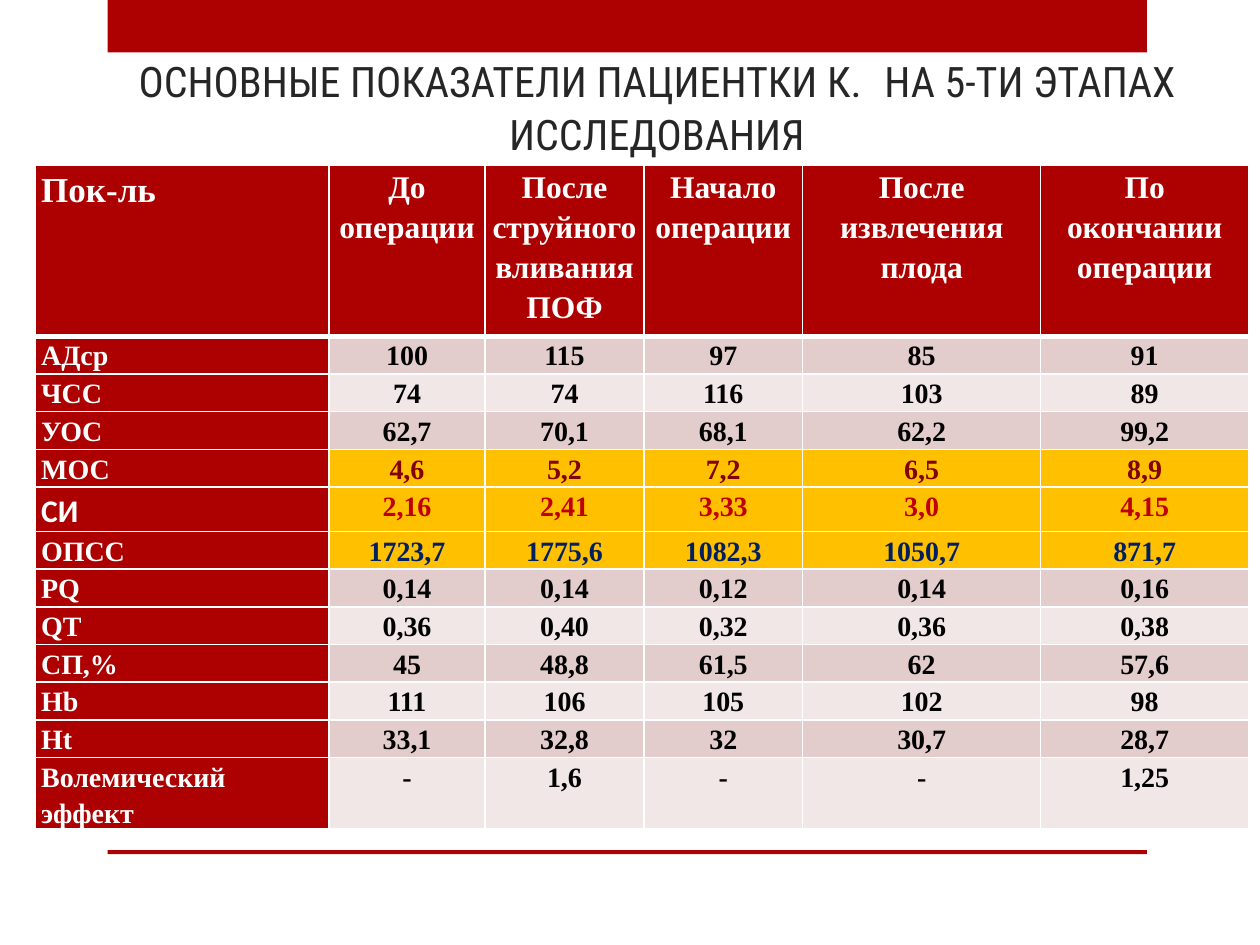
from lxml import etree
from pptx import Presentation
from pptx.dml.color import RGBColor
from pptx.enum import shapes, text
from pptx.oxml.ns import qn
from pptx.util import Cm, Pt

RED = RGBColor(0xAD, 0x01, 0x01)
WHITE = RGBColor(0xFF, 0xFF, 0xFF)
BLACK = RGBColor(0, 0, 0)
GREY = RGBColor(0x26, 0x26, 0x26)
GOLD = RGBColor(0xFF, 0xC0, 0x00)
BANDS = RGBColor(0xE3, 0xCC, 0xCC), RGBColor(0xF1, 0xE7, 0xE7)
HIGHLIGHTS = {
    "МОС": RGBColor(0x82, 0x01, 0x01),
    "СИ": RGBColor(0xC0, 0x00, 0x00),
    "ОПСС": RGBColor(0x00, 0x20, 0x60),
}

ROWS = [
    ["Пок-ль", "До операции", "После струйного вливания ПОФ",
     "Начало операции", "После извлечения плода", "По окончании операции"],
    ["АДср", "100", "115", "97", "85", "91"],
    ["ЧСС", "74", "74", "116", "103", "89"],
    ["УОС", "62,7", "70,1", "68,1", "62,2", "99,2"],
    ["МОС", "4,6", "5,2", "7,2", "6,5", "8,9"],
    ["СИ", "2,16", "2,41", "3,33", "3,0", "4,15"],
    ["ОПСС", "1723,7", "1775,6", "1082,3", "1050,7", "871,7"],
    ["PQ", "0,14", "0,14", "0,12", "0,14", "0,16"],
    ["QT", "0,36", "0,40", "0,32", "0,36", "0,38"],
    ["СП,%", "45", "48,8", "61,5", "62", "57,6"],
    ["Hb", "111", "106", "105", "102", "98"],
    ["Ht", "33,1", "32,8", "32", "30,7", "28,7"],
    ["Волемический эффект", "-", "1,6", "-", "-", "1,25"],
]
COL_WIDTHS = [5.92, 3.15, 3.2, 3.2, 4.8, 4.19]
HEADER_HEIGHT, ROW_HEIGHT = 3.45, 0.76


def set_borders(cell, top, bottom):
    """White cell borders; top and bottom are widths in points, the sides 1 pt."""
    tcPr = cell._tc.get_or_add_tcPr()
    widths = {"a:lnL": 1, "a:lnR": 1, "a:lnT": top, "a:lnB": bottom}
    for i, (tag, width) in enumerate(widths.items()):
        ln = etree.Element(qn(tag), w=str(Pt(width)))
        fill = etree.SubElement(ln, qn("a:solidFill"))
        etree.SubElement(fill, qn("a:srgbClr"), val=str(WHITE))
        tcPr.insert(i, ln)


prs = Presentation()
prs.slide_width, prs.slide_height = Cm(25.4), Cm(19.05)
s = prs.slides.add_slide(prs.slide_layouts[6])

# Bars above and below the content
for top, height in [(0, 1.06), (17.14, 0.08)]:
    sp = s.shapes.add_shape(shapes.MSO_SHAPE.RECTANGLE,
                            Cm(2.17), Cm(top), Cm(20.95), Cm(height))
    sp.shadow.inherit = False
    sp.fill.solid()
    sp.fill.fore_color.rgb = RED
    sp.line.fill.background()

# Table
tbl = s.shapes.add_table(len(ROWS), len(COL_WIDTHS), Cm(0.71), Cm(3.33),
                         Cm(sum(COL_WIDTHS)),
                         Cm(HEADER_HEIGHT + ROW_HEIGHT * (len(ROWS) - 1))).table
for col, width in zip(tbl.columns, COL_WIDTHS):
    col.width = Cm(width)

for i, row in enumerate(ROWS):
    tbl.rows[i].height = Cm(ROW_HEIGHT if i else HEADER_HEIGHT)
    name = row[0]
    for j, value in enumerate(row):
        if i == 0 or j == 0:
            fill, color = RED, WHITE
        elif name in HIGHLIGHTS:
            fill, color = GOLD, HIGHLIGHTS[name]
        else:
            fill, color = BANDS[(i - 1) % 2], BLACK
        size, font = (16 if i else 18), "Times New Roman"
        if value == "Пок-ль":
            size = 20
        elif value == "СИ":
            size, font = 18, "Calibri"

        cell = tbl.cell(i, j)
        cell.margin_left = cell.margin_right = Cm(0.12)
        cell.margin_top = cell.margin_bottom = 0
        cell.fill.solid()
        cell.fill.fore_color.rgb = fill
        set_borders(cell, top=3 if i == 1 else 1, bottom=1 if i else 3)
        p = cell.text_frame.paragraphs[0]
        p.text = value
        p.line_spacing = 1.15
        p.alignment = text.PP_ALIGN.CENTER if j else text.PP_ALIGN.LEFT
        r = p.runs[0]
        r.font.name, r.font.size, r.font.bold = font, Pt(size), True
        r.font.color.rgb = color

# Title
tf = s.shapes.add_textbox(Cm(1.09), Cm(0.74), Cm(24.31), Cm(2.59)).text_frame
tf.word_wrap = True
tf.vertical_anchor = text.MSO_ANCHOR.BOTTOM
p = tf.paragraphs[0]
p.alignment = text.PP_ALIGN.CENTER
for part, size in [("ОСНОВНЫЕ ПОКАЗАТЕЛИ ПАЦИЕНТКИ К. ", 24), (" ", 32),
                   ("НА 5-ТИ ЭТАПАХ ИССЛЕДОВАНИЯ", 24)]:
    r = p.add_run()
    r.text = part
    r.font.name, r.font.size = "Roboto Condensed", Pt(size)
    r.font.color.rgb = GREY

prs.save("out.pptx")
